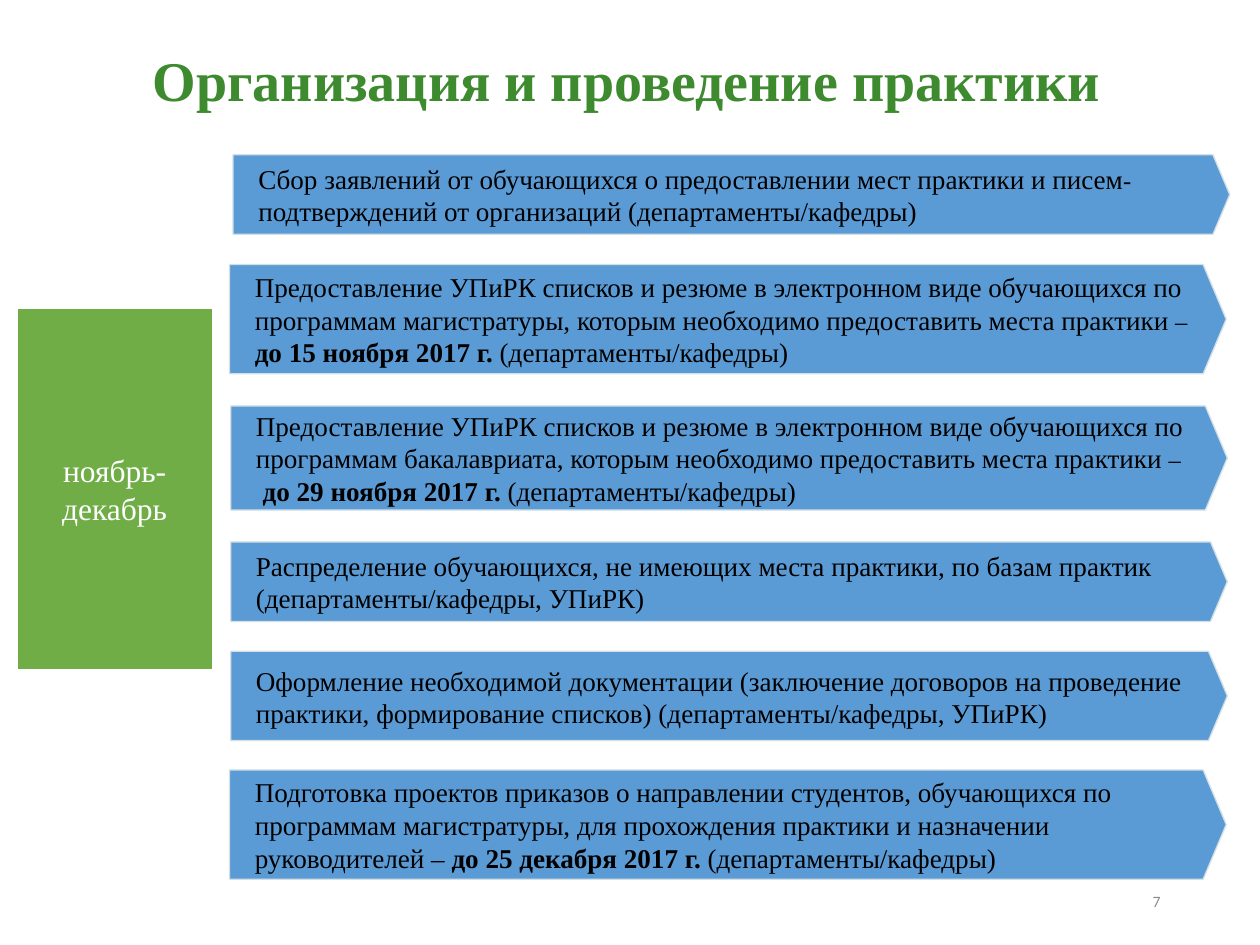
from dataclasses import dataclass

from pptx import Presentation
from pptx.dml.color import RGBColor
from pptx.enum.shapes import MSO_SHAPE as Preset
from pptx.enum.text import MSO_ANCHOR as Anchor, PP_ALIGN as Align
from pptx.shapes.autoshape import Shape
from pptx.slide import Slide
from pptx.util import Pt

COLORS = {
    "title": "3E8A2F",
    "period": "70AD47",
    "step": "5B9BD5",
    "step_line": "D2E0E6",
    "number": "8C8C8C",
    "white": "FFFFFF",
    "black": "000000",
}
SERIF = "Times New Roman"
STEP_WIDTH = 569.5
STEP_POINT = 0.211
STEP_INDENT = 14.4
INSET = 7.2


@dataclass
class Run:
    text: str
    size: float = 15.5
    color: str = "black"
    bold: bool = False
    italic: bool = False
    font: str = SERIF
    break_after: bool = False


@dataclass
class Box:
    left: float
    top: float
    width: float
    height: float


@dataclass
class Step:
    left: float
    top: float
    height: float
    runs: list[Run]
    anchor: Anchor = Anchor.MIDDLE


DEPARTMENTS = Run("(департаменты/кафедры)")
LISTS = "Предоставление УПиРК списков и резюме в электронном виде обучающихся по программам "
PLACES = ", которым необходимо предоставить места практики "

STEPS = [
    Step(133.2, 88.5, 45.4, [
        Run("Сбор заявлений от обучающихся о предоставлении мест практики и писем"),
        Run("-", size=14),
        Run("подтверждений от организаций (департаменты/кафедры)"),
    ]),
    Step(131.2, 151.2, 62.4, [
        Run(LISTS + "магистратуры" + PLACES),
        Run("–", size=14),
        Run(" "),
        Run("до 15 ноября 2017 г. ", bold=True),
        DEPARTMENTS,
    ]),
    Step(131.8, 232, 59.5, [
        Run(LISTS + "бакалавриата" + PLACES),
        Run("–", size=14, break_after=True),
        Run(" "),
        Run("до 29 ноября 2017 г. ", bold=True),
        DEPARTMENTS,
    ]),
    Step(131.8, 309.7, 45.4, [
        Run("Распределение обучающихся, не имеющих места практики, по базам практик "
            "(департаменты/кафедры, УПиРК)"),
    ]),
    Step(131.8, 372.2, 51, [
        Run("Оформление необходимой документации (заключение договоров на проведение "
            "практики, формирование списков) (департаменты/кафедры, УПиРК)"),
    ], Anchor.TOP),
    Step(131.2, 440, 62.4, [
        Run("Подготовка проектов приказов о направлении студентов, обучающихся по "
            "программам магистратуры, для прохождения практики и назначении руководителей "),
        Run("– ", italic=True),
        Run("до 25 декабря 2017 г. ", bold=True),
        DEPARTMENTS,
    ]),
]


def rgb(name: str) -> RGBColor:
    return RGBColor.from_string(COLORS[name])


def write(shape: Shape, runs: list[Run], align: Align, anchor: Anchor = Anchor.MIDDLE,
          indent: float = 0, spacing: float | None = None) -> None:
    frame = shape.text_frame
    frame.word_wrap = True
    frame.vertical_anchor = anchor
    paragraph = frame.paragraphs[0]
    paragraph.alignment = align
    if spacing:
        paragraph.line_spacing = spacing
    if indent:
        properties = paragraph._p.get_or_add_pPr()
        properties.set("marL", str(Pt(indent)))
        properties.set("indent", "0")
    for item in runs:
        run = paragraph.add_run()
        run.text = item.text
        font = run.font
        font.name, font.size = item.font, Pt(item.size)
        font.bold, font.italic = item.bold, item.italic
        font.color.rgb = rgb(item.color)
        if item.break_after:
            paragraph.add_line_break()


def add_text(slide: Slide, box: Box, run: Run, align: Align,
             spacing: float | None = None) -> None:
    shape = slide.shapes.add_textbox(Pt(box.left), Pt(box.top), Pt(box.width), Pt(box.height))
    write(shape, [run], align, spacing=spacing)


def add_block(slide: Slide, preset: Preset, box: Box, fill: str, line: str,
              line_width: float) -> Shape:
    shape = slide.shapes.add_shape(
        preset, Pt(box.left), Pt(box.top), Pt(box.width), Pt(box.height))
    shape.shadow.inherit = False
    shape.fill.solid()
    shape.fill.fore_color.rgb = rgb(fill)
    shape.line.color.rgb = rgb(line)
    shape.line.width = Pt(line_width)
    frame = shape.text_frame
    frame.margin_left = frame.margin_right = 0
    frame.margin_top = frame.margin_bottom = Pt(INSET)
    return shape


def add_step(slide: Slide, step: Step) -> None:
    box = Box(step.left, step.top, STEP_WIDTH, step.height)
    shape = add_block(slide, Preset.PENTAGON, box, "step", "step_line", 0.75)
    shape.adjustments[0] = STEP_POINT
    write(shape, step.runs, Align.LEFT, step.anchor, STEP_INDENT)


def main() -> None:
    presentation = Presentation()
    presentation.slide_width, presentation.slide_height = Pt(720), Pt(540)
    slide = presentation.slides.add_slide(presentation.slide_layouts[6])

    # Title
    add_text(slide, Box(9.4, 21.6, 697.7, 51.8),
             Run("Организация и проведение практики", 32, "title", bold=True),
             Align.CENTER, 0.9)

    # Period
    period = add_block(slide, Preset.RECTANGLE, Box(9.4, 175.7, 112.3, 207.4),
                       "period", "white", 1.5)
    write(period, [Run("ноябрь-декабрь", 18, "white")], Align.CENTER)

    # Steps
    for step in STEPS:
        add_step(slide, step)

    # Slide number
    add_text(slide, Box(508.3, 500.4, 162, 28.8),
             Run("7", 9, "number", font="Calibri"), Align.RIGHT)

    presentation.save("out.pptx")


if __name__ == "__main__":
    main()
